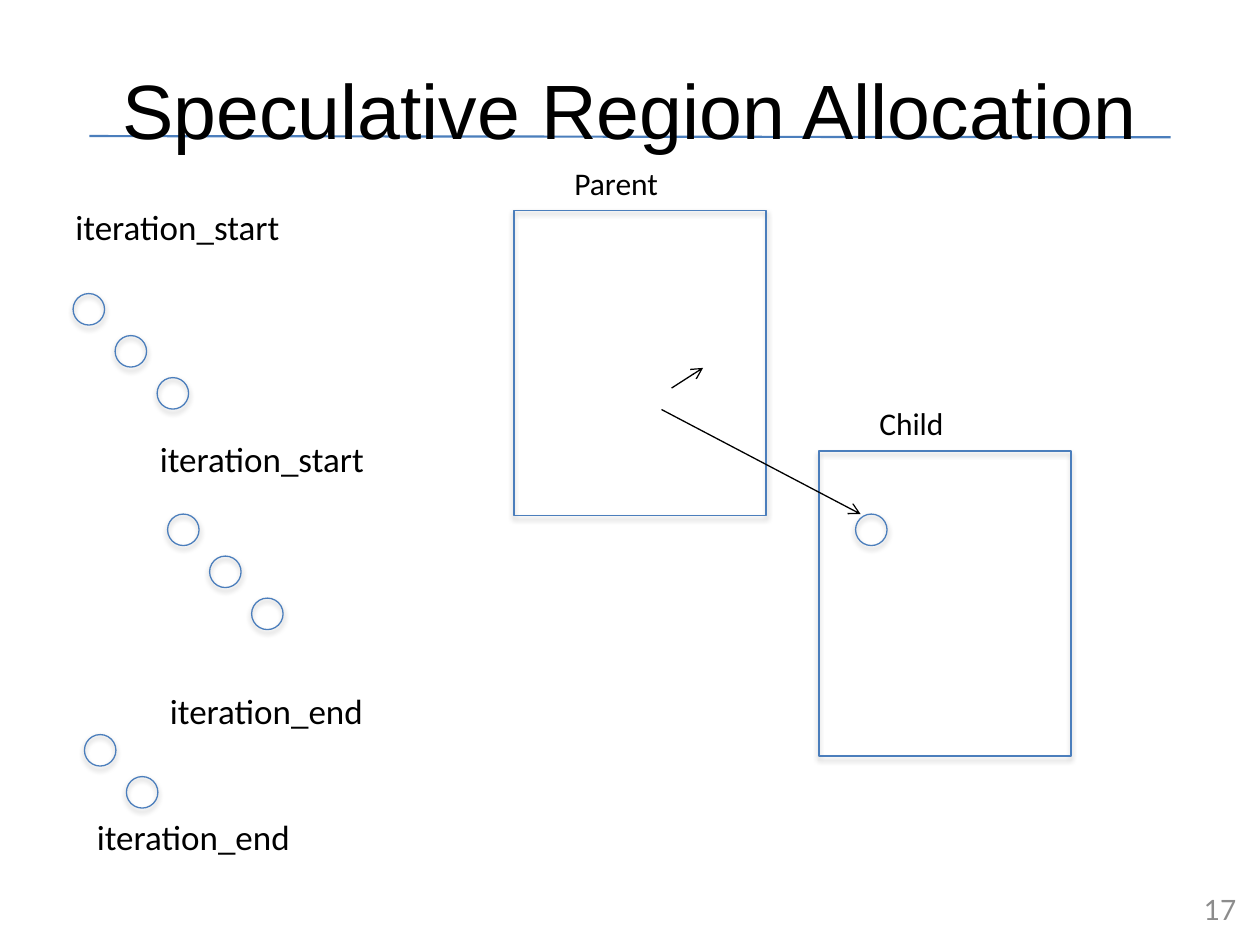
from lxml.etree import SubElement
from pptx import Presentation
from pptx.dml.color import RGBColor
from pptx.enum.shapes import MSO_CONNECTOR as Connector, MSO_SHAPE as Shape
from pptx.enum.text import MSO_ANCHOR as Anchor, PP_ALIGN as Align
from pptx.oxml.ns import qn
from pptx.util import Inches, Pt

BLACK = RGBColor(0x00, 0x00, 0x00)
BLUE = RGBColor(0x4B, 0x7E, 0xBC)
GRAY = RGBColor(0x8C, 0x8C, 0x8C)

CIRCLE_SIZE = 0.25
CIRCLE_STEP = 1 / 3
REGION_SIZE = (2, 2.42)


class RegionSlide:
    """Holds the style and the slide being drawn; lengths are in inches."""

    def __init__(self, slide):
        self.slide = slide
        self.font = "Calibri"
        self.outline = BLUE
        self.outline_width = Pt(0.75)

    def text(self, text, left, top, width, height, size, font=None, color=BLACK,
             align=Align.LEFT, anchor=Anchor.TOP, inset=0.05):
        box = self.slide.shapes.add_textbox(
            Inches(left), Inches(top), Inches(width), Inches(height))
        frame = box.text_frame
        frame.word_wrap = True
        frame.vertical_anchor = anchor
        frame.margin_top = Inches(inset)
        paragraph = frame.paragraphs[0]
        paragraph.text = text
        paragraph.alignment = align
        paragraph.font.name = font or self.font
        paragraph.font.size = Pt(size)
        paragraph.font.color.rgb = color

    def outlined(self, kind, left, top, width, height):
        """Add an unfilled shape with a soft shadow below it."""
        shape = self.slide.shapes.add_shape(
            kind, Inches(left), Inches(top), Inches(width), Inches(height))
        shape.fill.background()
        shape.line.color.rgb = self.outline
        shape.line.width = self.outline_width
        shape.shadow.inherit = False
        effects = shape._element.spPr.find(qn("a:effectLst"))
        shadow = SubElement(effects, qn("a:outerShdw"), blurRad=str(Pt(3.1)),
                            dist=str(Pt(1.8)), dir="5400000", rotWithShape="0")
        shadow_color = SubElement(shadow, qn("a:srgbClr"), val=str(BLACK))
        SubElement(shadow_color, qn("a:alpha"), val="35000")

    def region(self, name, left, top):
        self.text(name, left + 0.38, top - 0.42, 1.75, 0.42, 18)
        self.outlined(Shape.RECTANGLE, left, top, *REGION_SIZE)

    def allocations(self, left, top, count):
        """Add circles stepping down to the right."""
        for index in range(count):
            offset = index * CIRCLE_STEP
            self.outlined(Shape.OVAL, left + offset, top + offset,
                          CIRCLE_SIZE, CIRCLE_SIZE)

    def line(self, start, end, color=BLACK, width=0.75, arrow=True):
        connector = self.slide.shapes.add_connector(
            Connector.STRAIGHT, *map(Inches, start + end))
        connector.line.color.rgb = color
        connector.line.width = Pt(width)
        if arrow:
            SubElement(connector.line._get_or_add_ln(), qn("a:tailEnd"), type="arrow")
        SubElement(connector._element.spPr, qn("a:effectLst"))


def main():
    presentation = Presentation()
    presentation.slide_width = Inches(10)
    presentation.slide_height = Inches(7.5)
    page = RegionSlide(presentation.slides.add_slide(presentation.slide_layouts[6]))

    page.line((0.71, 1.08), (9.29, 1.09), BLUE, 1.25, arrow=False)
    page.text("Speculative Region Allocation", 0.5, 0.4, 9, 1.25, 44,
              font="Arial", align=Align.CENTER, inset=0.1)
    page.text("17", 7.58, 7.02, 2.33, 0.4, 16, font="Lato", color=GRAY,
              align=Align.RIGHT, anchor=Anchor.MIDDLE)

    for label, left, top in (
        ("iteration_start", 0.5, 1.58),
        ("iteration_start", 1.17, 3.42),
        ("iteration_end", 1.25, 5.42),
        ("iteration_end", 0.67, 6.42),
    ):
        page.text(label, left, top, 3.5, 0.44, 20)

    page.region("Parent", 4.08, 1.67)
    page.region("Child", 6.5, 3.58)

    for left, top, count in (
        (0.58, 2.33, 3),
        (1.33, 4.08, 3),
        (0.67, 5.83, 2),
        (6.79, 4.08, 1),
    ):
        page.allocations(left, top, count)

    page.line((5.25, 3.25), (6.83, 4.08))
    page.line((5.33, 3.08), (5.58, 2.92))

    presentation.save("out.pptx")


if __name__ == "__main__":
    main()
